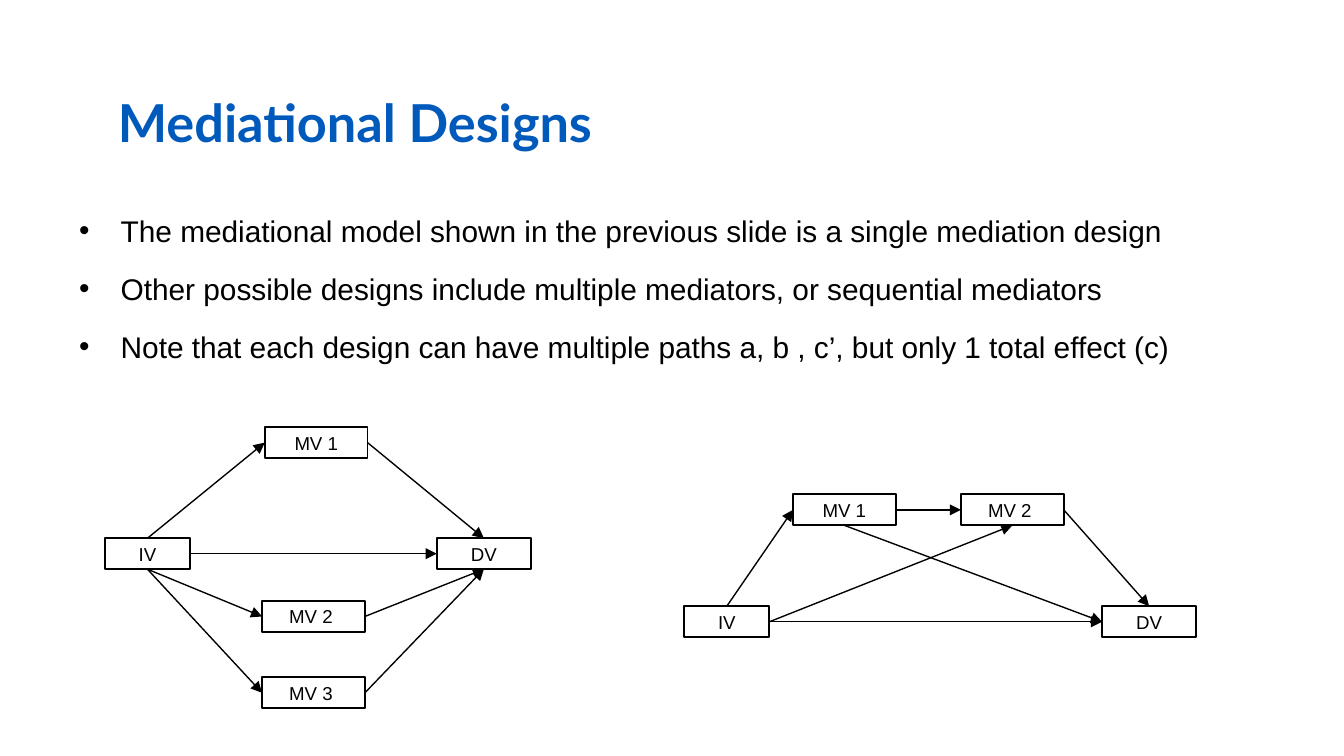
from pptx import Presentation
from pptx.dml.color import RGBColor as Rgb
from pptx.enum.shapes import MSO_CONNECTOR as Conn, MSO_SHAPE as Kind
from pptx.enum.text import MSO_ANCHOR as Anchor, PP_ALIGN as Align
from pptx.oxml.ns import qn
from pptx.util import Inches, Pt
from lxml.etree import SubElement as Sub

THEME = {
    "head": {"size": 28, "font": "Lato", "color": "005ABB", "bold": True},
    "body": {"size": 16, "font": "Arial", "color": "000000", "bold": False},
    "node": {"size": 10, "font": "Arial", "color": "000000", "bold": False},
    "fill": "FFFFFF",
    "line": "000000",
    "edge": 1,
    "arrow": 0.75,
}
WIDE = 10
HIGH = WIDE * 9 / 16
COLS = ROWS = 100

TITLE = ("Mediational Designs", (7.8, 10.5, 84.4, 11.2))
POINTS = [
    "The mediational model shown in the previous slide is a single mediation design",
    "Other possible designs include multiple mediators, or sequential mediators",
    "Note that each design can have multiple paths a, b , c’, but only 1 total effect (c)",
]
AREA = (4.9, 27.2, 90.8, 22.2)
INDENT = 0.31

TALL = 4.1
SPANS = {"IV": 6.35, "DV": 7, "MV": 7.65}
TOP, LEFT, BASE, RIGHT = range(4)
MODELS = [
    {
        "nodes": {
            "IV": (7.8, 71.2), "DV": (32.5, 71.2), "MV 1": (19.7, 56.5),
            "MV 2 ": (19.5, 79.5), "MV 3 ": (19.5, 89.6),
        },
        "paths": [
            ("IV", TOP, "MV 1", LEFT), ("MV 1", RIGHT, "DV", TOP),
            ("IV", RIGHT, "DV", LEFT),
            ("IV", BASE, "MV 2 ", LEFT), ("IV", BASE, "MV 3 ", LEFT),
            ("MV 2 ", RIGHT, "DV", BASE), ("MV 3 ", RIGHT, "DV", BASE),
        ],
    },
    {
        "nodes": {
            "IV": (50.9, 80.2), "DV": (82, 80.2),
            "MV 1": (59, 65.4), "MV 2 ": (71.5, 65.4),
        },
        "paths": [
            ("IV", TOP, "MV 1", LEFT), ("MV 2 ", RIGHT, "DV", TOP),
            ("IV", RIGHT, "DV", LEFT), ("MV 1", RIGHT, "MV 2 ", LEFT),
            ("MV 1", BASE, "DV", LEFT), ("IV", RIGHT, "MV 2 ", BASE),
        ],
    },
]


def place(x, y, w, h):
    col, row = WIDE / COLS, HIGH / ROWS
    return Inches(x * col), Inches(y * row), Inches(w * col), Inches(h * row)


def write(para, text, style):
    run = para.add_run()
    run.text = text
    look = THEME[style]
    run.font.size = Pt(look["size"])
    run.font.name = look["font"]
    run.font.bold = look["bold"]
    run.font.color.rgb = Rgb.from_string(look["color"])


def bullet(para):
    props = para._p.get_or_add_pPr()
    props.set("marL", str(Inches(INDENT)))
    props.set("indent", str(-Inches(INDENT)))
    tint = Sub(props, qn("a:buClr"))
    Sub(tint, qn("a:srgbClr"), val=THEME["line"])
    Sub(props, qn("a:buFont"), typeface=THEME["body"]["font"])
    Sub(props, qn("a:buChar"), char="•")


def add_head(slide):
    text, area = TITLE
    frame = slide.shapes.add_textbox(*place(*area)).text_frame
    frame.word_wrap = True
    frame.vertical_anchor = Anchor.MIDDLE
    frame.margin_top = frame.margin_bottom = Inches(0.1)
    write(frame.paragraphs[0], text, "head")


def add_list(slide):
    frame = slide.shapes.add_textbox(*place(*AREA)).text_frame
    frame.word_wrap = True
    for i, text in enumerate(POINTS):
        para = frame.add_paragraph() if i else frame.paragraphs[0]
        para.level = 6
        para.space_after = Pt(12)
        bullet(para)
        write(para, text, "body")


def add_node(slide, name, x, y):
    area = place(x, y, SPANS[name[:2]], TALL)
    box = slide.shapes.add_shape(Kind.RECTANGLE, *area)
    box.shadow.inherit = False
    box.fill.solid()
    box.fill.fore_color.rgb = Rgb.from_string(THEME["fill"])
    box.line.color.rgb = Rgb.from_string(THEME["line"])
    box.line.width = Pt(THEME["edge"])
    frame = box.text_frame
    frame.vertical_anchor = Anchor.MIDDLE
    para = frame.paragraphs[0]
    para.alignment = Align.CENTER
    write(para, name, "node")
    return box


def add_path(slide, start, out, end, into):
    link = slide.shapes.add_connector(Conn.STRAIGHT, 0, 0, 0, 0)
    link.begin_connect(start, out)
    link.end_connect(end, into)
    link.line.color.rgb = Rgb.from_string(THEME["line"])
    link.line.width = Pt(THEME["arrow"])
    props = link._element.spPr
    Sub(props.find(qn("a:ln")), qn("a:tailEnd"), type="triangle")
    Sub(props, qn("a:effectLst"))


def main():
    deck = Presentation()
    deck.slide_width, deck.slide_height = Inches(WIDE), Inches(HIGH)
    slide = deck.slides.add_slide(deck.slide_layouts[6])
    add_head(slide)
    add_list(slide)
    for model in MODELS:
        boxes = {n: add_node(slide, n, *at) for n, at in model["nodes"].items()}
        for start, out, end, into in model["paths"]:
            add_path(slide, boxes[start], out, boxes[end], into)
    deck.save("out.pptx")


if __name__ == "__main__":
    main()
